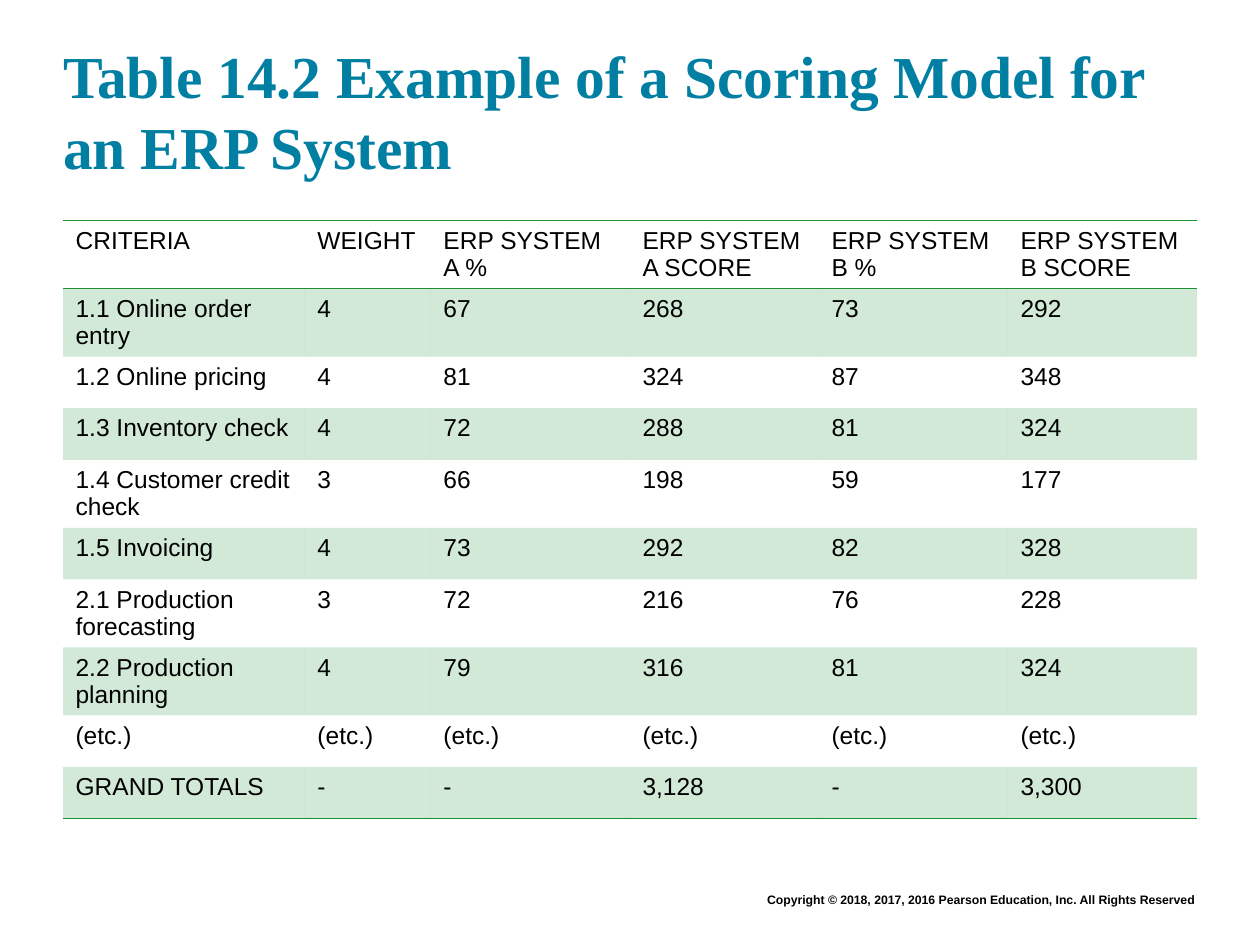
"""Build a slide with a scoring table for an ERP system."""
from lxml.etree import SubElement
from pptx import Presentation
from pptx.dml.color import RGBColor
from pptx.enum.text import MSO_ANCHOR, MSO_AUTO_SIZE, PP_ALIGN
from pptx.oxml.ns import qn
from pptx.util import Inches, Pt

COLORS = {"title": "007FA3", "text": "000000", "green": "1B9332"}
PLAIN = "{2D5ABB26-0587-4C30-8999-92F81FD0307C}"
WIDTHS = [1.92, 1, 1.58, 1.5, 1.5, 1.5]
ROWS = [
    ["CRITERIA", "WEIGHT", "ERP SYSTEM\nA %", "ERP SYSTEM\nA SCORE",
     "ERP SYSTEM\nB %", "ERP SYSTEM\nB SCORE"],
    ["1.1 Online order entry", "4", "67", "268", "73", "292"],
    ["1.2 Online pricing", "4", "81", "324", "87", "348"],
    ["1.3 Inventory check", "4", "72", "288", "81", "324"],
    ["1.4 Customer credit check", "3", "66", "198", "59", "177"],
    ["1.5 Invoicing", "4", "73", "292", "82", "328"],
    ["2.1 Production forecasting", "3", "72", "216", "76", "228"],
    ["2.2 Production planning", "4", "79", "316", "81", "324"],
    ["(etc.)"] * 6,
    ["GRAND TOTALS", "-", "-", "3,128", "-", "3,300"],
]


def write(frame, text, size=14, name="Arial", color="text", bold=False, align=PP_ALIGN.LEFT):
    """Fill a text frame, one paragraph for each line."""
    frame.text = text
    for para in frame.paragraphs:
        para.alignment = align
        for run in para.runs:
            font = run.font
            font.size, font.name, font.bold = Pt(size), name, bold
            font.color.rgb = RGBColor.from_string(COLORS[color])


def border(cell, side):
    """Draw a thin green line on one side of a cell."""
    line = SubElement(cell._tc.get_or_add_tcPr(), qn(f"a:{side}"), w=str(Pt(1)))
    fill = SubElement(line, qn("a:solidFill"))
    SubElement(fill, qn("a:srgbClr"), val=COLORS["green"])


deck = Presentation()
deck.slide_width, deck.slide_height = Inches(10), Inches(7.5)
slide = deck.slides.add_slide(deck.slide_layouts[5])

title = slide.shapes.title
title.left, title.top, title.width, title.height = map(Inches, (0.5, 0.24, 9, 1.2))
frame = title.text_frame
frame.margin_left = frame.margin_top = frame.margin_right = frame.margin_bottom = 0
frame.vertical_anchor = MSO_ANCHOR.BOTTOM
frame.auto_size = MSO_AUTO_SIZE.NONE
write(frame, "Table 14.2 Example of a Scoring Model for an ERP System",
      size=34, name="Times New Roman", color="title", bold=True)

table = slide.shapes.add_table(
    len(ROWS), len(WIDTHS), Inches(0.5), Inches(1.75), Inches(9), Inches(4.1)).table
table.first_row = table.horz_banding = False
table._tbl.tblPr.find(qn("a:tableStyleId")).text = PLAIN
for col, width in zip(table.columns, WIDTHS):
    col.width = Inches(width)

for i, texts in enumerate(ROWS):
    table.rows[i].height = Inches(0.54 if i in (0, 1, 4, 6, 7) else 0.41)
    for j, text in enumerate(texts):
        cell = table.cell(i, j)
        write(cell.text_frame, text)
        if i == 0:
            border(cell, "lnT")
        if i in (0, len(ROWS) - 1):
            border(cell, "lnB")
        if i % 2:
            cell.fill.solid()
            cell.fill.fore_color.rgb = RGBColor.from_string(COLORS["green"])
            shade = cell._tc.tcPr.find(qn("a:solidFill")).find(qn("a:srgbClr"))
            SubElement(shade, qn("a:alpha"), val="20000")
        else:
            cell.fill.background()

note = slide.shapes.add_textbox(Inches(1.75), Inches(7.03), Inches(7.83), Inches(0.22))
note.text_frame.word_wrap = True
write(note.text_frame, "Copyright © 2018, 2017, 2016 Pearson Education, Inc. All Rights Reserved",
      size=7, bold=True, align=PP_ALIGN.RIGHT)

deck.save("out.pptx")
